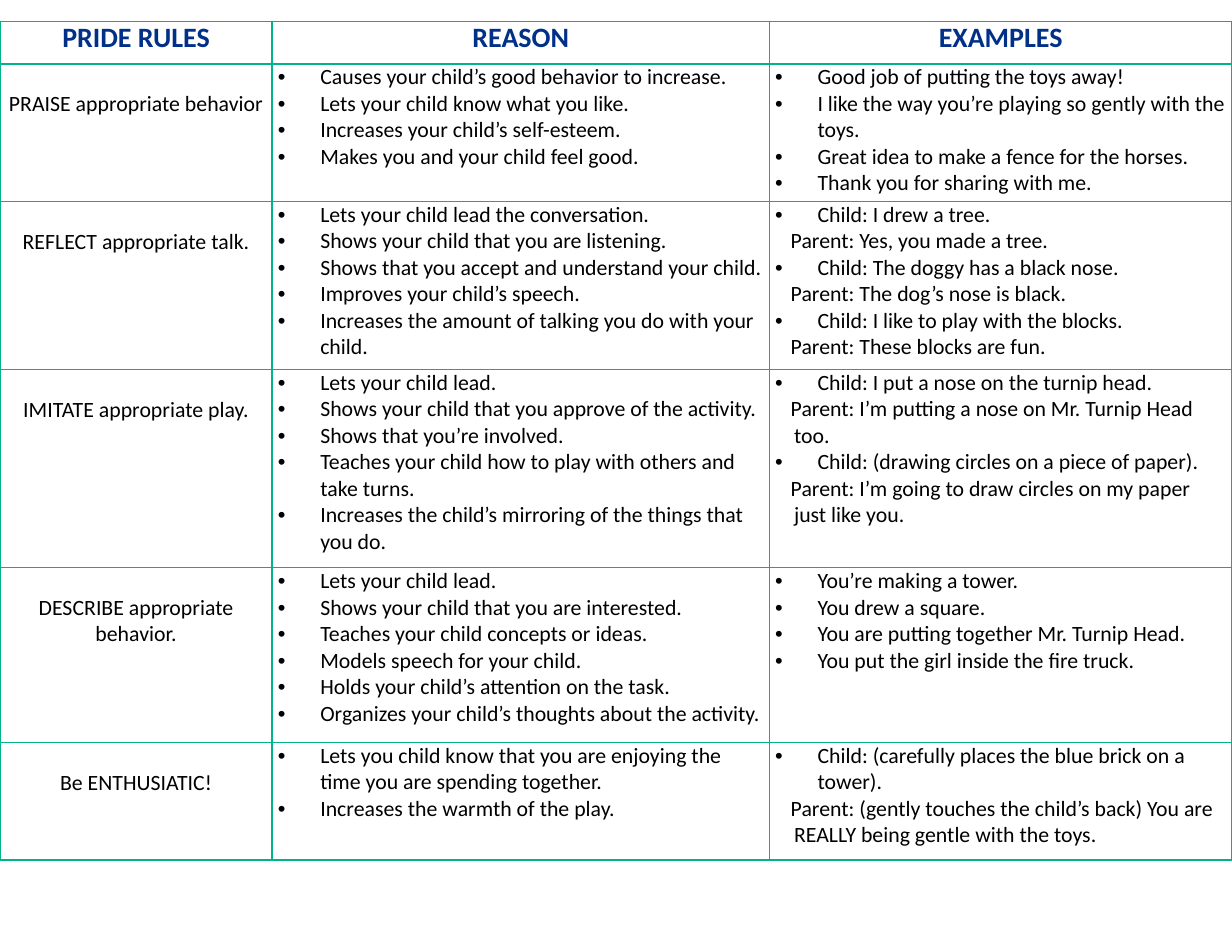
from lxml import etree
from pptx import Presentation
from pptx import util as u
from pptx.dml.color import RGBColor
from pptx.enum import text
from pptx.oxml.ns import qn

COLORS = {"heading": "003087", "body": "000000", "border": "00B388"}
FONT = "Calibri"
HEADING = {"size": u.Pt(18), "bold": True, "name": FONT}
BODY = {"size": u.Pt(14), "bold": False, "name": FONT}

COL_WIDTHS = [2.43, 4.44, 4.13]
ROW_HEIGHTS = [0.38, 1.23, 1.5, 1.77, 1.56, 1.05]
RULE_TOP = 0.24  # rules start one text line down
BULLET_INDENT = (0.38, -0.38)
REPLY_INDENT = (0.17, -0.03)

HEADERS = ["PRIDE RULES", "REASON", "EXAMPLES"]
# Each rule with its reasons and examples; parents' replies have no bullet
RULES = [
    ("PRAISE appropriate behavior",
     ["Causes your child’s good behavior to increase.",
      "Lets your child know what you like.",
      "Increases your child’s self-esteem.",
      "Makes you and your child feel good."],
     ["Good job of putting the toys away!",
      "I like the way you’re playing so gently with the toys.",
      "Great idea to make a fence for the horses.",
      "Thank you for sharing with me."]),
    ("REFLECT appropriate talk.",
     ["Lets your child lead the conversation.",
      "Shows your child that you are listening.",
      "Shows that you accept and understand your child.",
      "Improves your child’s speech.",
      "Increases the amount of talking you do with your child."],
     ["Child: I drew a tree.",
      "Parent: Yes, you made a tree.",
      "Child: The doggy has a black nose.",
      "Parent: The dog’s nose is black.",
      "Child: I like to play with the blocks.",
      "Parent: These blocks are fun."]),
    ("IMITATE appropriate play.",
     ["Lets your child lead.",
      "Shows your child that you approve of the activity.",
      "Shows that you’re involved.",
      "Teaches your child how to play with others and take turns.",
      "Increases the child’s mirroring of the things that you do."],
     ["Child: I put a nose on the turnip head.",
      "Parent: I’m putting a nose on Mr. Turnip Head too.",
      "Child: (drawing circles on a piece of paper).",
      "Parent: I’m going to draw circles on my paper just like you."]),
    ("DESCRIBE appropriate behavior.",
     ["Lets your child lead.",
      "Shows your child that you are interested.",
      "Teaches your child concepts or ideas.",
      "Models speech for your child.",
      "Holds your child’s attention on the task.",
      "Organizes your child’s thoughts about the activity."],
     ["You’re making a tower.",
      "You drew a square.",
      "You are putting together Mr. Turnip Head.",
      "You put the girl inside the fire truck."]),
    ("Be ENTHUSIATIC!",
     ["Lets you child know that you are enjoying the time you are spending together.",
      "Increases the warmth of the play."],
     ["Child: (carefully places the blue brick on a tower).",
      "Parent: (gently touches the child’s back) You are REALLY being gentle with the toys."]),
]


def set_borders(cell):
    tcPr = cell._tc.get_or_add_tcPr()
    for i, side in enumerate(("lnL", "lnR", "lnT", "lnB")):
        ln = etree.Element(qn(f"a:{side}"), w=str(u.Pt(1)))
        fill = etree.SubElement(ln, qn("a:solidFill"))
        etree.SubElement(fill, qn("a:srgbClr"), val=COLORS["border"])
        tcPr.insert(i, ln)


def format_cell(cell, top=0):
    margins = {"margin_left": 0.05, "margin_right": 0.05,
               "margin_top": top, "margin_bottom": 0}
    for name, value in margins.items():
        setattr(cell, name, u.Inches(value))
    cell.fill.background()
    set_borders(cell)


def add_text(p, words, style, color):
    r = p.add_run()
    r.text = words
    for name, value in style.items():
        setattr(r.font, name, value)
    r.font.color.rgb = RGBColor.from_string(COLORS[color])


def fill_centered(cell, words, style, color, top=0):
    format_cell(cell, top)
    p = cell.text_frame.paragraphs[0]
    p.alignment = text.PP_ALIGN.CENTER
    add_text(p, words, style, color)


def set_indent(p, left, first, bullet):
    pPr = p._p.get_or_add_pPr()
    pPr.set("marL", str(u.Inches(left)))
    pPr.set("indent", str(u.Inches(first)))
    if bullet:
        etree.SubElement(pPr, qn("a:buFont"), typeface="Arial")
        etree.SubElement(pPr, qn("a:buChar"), char="•")
    else:
        etree.SubElement(pPr, qn("a:buNone"))


def fill_list(cell, lines):
    format_cell(cell)
    tf = cell.text_frame
    for i, line in enumerate(lines):
        p = tf.add_paragraph() if i else tf.paragraphs[0]
        reply = line.startswith("Parent:")
        set_indent(p, *(REPLY_INDENT if reply else BULLET_INDENT), not reply)
        add_text(p, line, BODY, "body")


def add_rules_table(s):
    table = s.shapes.add_table(
        len(ROW_HEIGHTS), len(COL_WIDTHS), 0, u.Inches(0.19),
        u.Inches(sum(COL_WIDTHS)), u.Inches(sum(ROW_HEIGHTS))).table
    table.first_row = table.horz_banding = False
    for column, width in zip(table.columns, COL_WIDTHS):
        column.width = u.Inches(width)
    for row, height in zip(table.rows, ROW_HEIGHTS):
        row.height = u.Inches(height)

    # Header row
    for col, heading in enumerate(HEADERS):
        fill_centered(table.cell(0, col), heading, HEADING, "heading")

    # One row per rule
    for row, (rule, reasons, examples) in enumerate(RULES, start=1):
        fill_centered(table.cell(row, 0), rule, BODY, "body", RULE_TOP)
        fill_list(table.cell(row, 1), reasons)
        fill_list(table.cell(row, 2), examples)


def main():
    prs = Presentation()
    prs.slide_width, prs.slide_height = u.Inches(11), u.Inches(8.5)
    s = prs.slides.add_slide(prs.slide_layouts[6])
    add_rules_table(s)
    prs.save("out.pptx")


if __name__ == "__main__":
    main()
